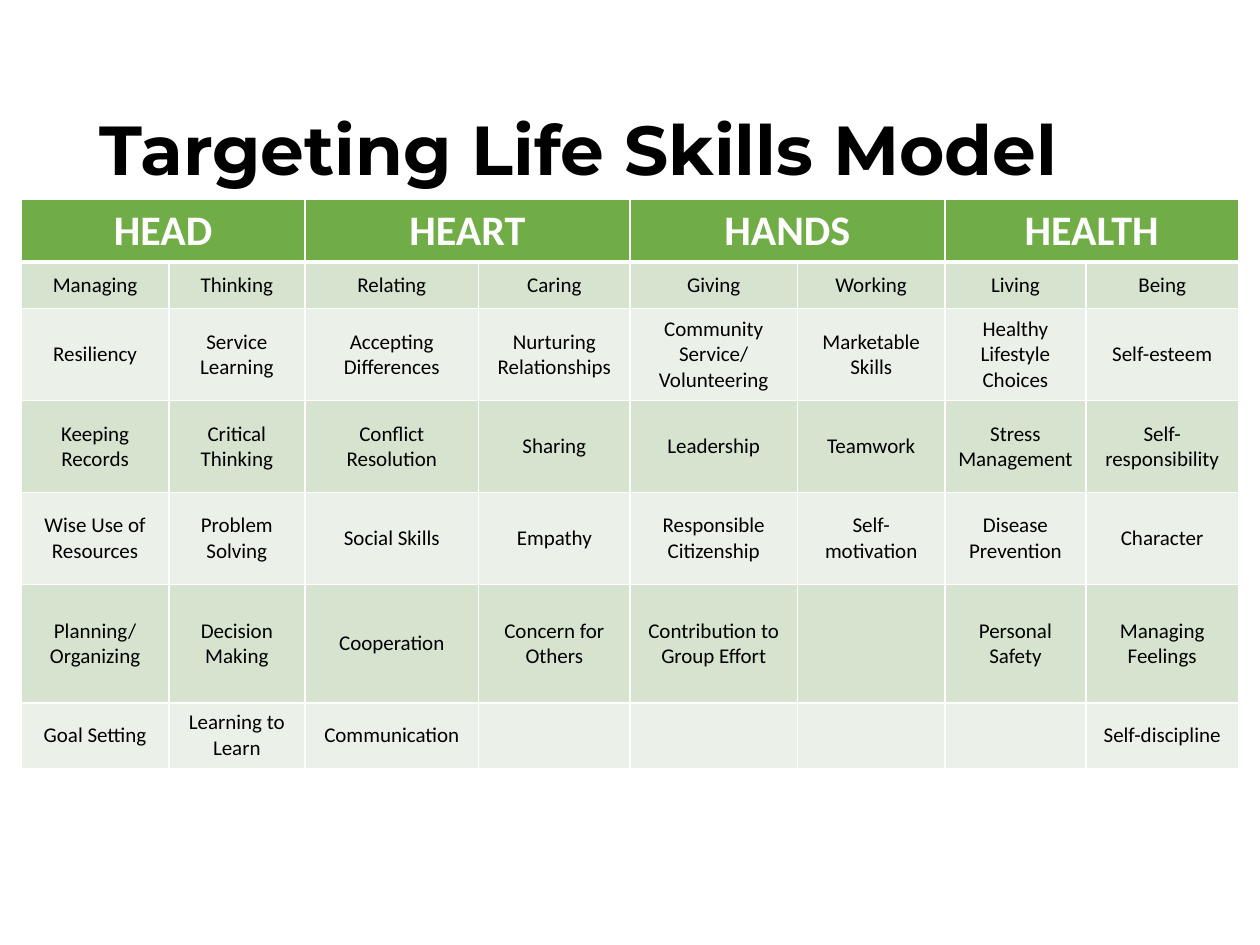
from dataclasses import dataclass

from lxml.etree import SubElement
from pptx import Presentation
from pptx.dml.color import RGBColor
from pptx.enum.text import MSO_ANCHOR, PP_ALIGN
from pptx.oxml.ns import qn
from pptx.util import Inches, Pt


@dataclass(frozen=True)
class Theme:
    """Colours, fonts and type sizes of the slide."""
    ink: str = "000000"
    white: str = "FFFFFF"
    green: str = "70AD47"
    bands: tuple = ("D5E3CF", "EBF1E9")
    title_font: str = "Montserrat"
    body_font: str = "Calibri"
    title_size: float = 39.6
    head_size: float = 24
    body_size: float = 12
    rule: float = 1
    head_rule: float = 3


THEME = Theme()
WIDTH, HEIGHT = Inches(10), Inches(7.5)
COLUMN_PERCENTS = (11.7, 10.8, 13.8, 12, 13.3, 11.7, 11.2, 12.1)
ROW_PERCENTS = (6.4, 4.93, 9.73, 9.73, 9.73, 12.53, 6.93)
HEADINGS = ("HEAD", "HEART", "HANDS", "HEALTH")
SKILLS = (
    ("Managing", "Thinking", "Relating", "Caring",
     "Giving", "Working", "Living", "Being"),
    ("Resiliency", "Service Learning", "Accepting Differences",
     "Nurturing Relationships", "Community Service/\nVolunteering",
     "Marketable Skills", "Healthy Lifestyle Choices", "Self-esteem"),
    ("Keeping Records", "Critical Thinking", "Conflict Resolution", "Sharing",
     "Leadership", "Teamwork", "Stress Management", "Self-responsibility"),
    ("Wise Use of Resources", "Problem Solving", "Social Skills", "Empathy",
     "Responsible Citizenship", "Self-motivation", "Disease Prevention",
     "Character"),
    ("Planning/\nOrganizing", "Decision Making", "Cooperation",
     "Concern for Others", "Contribution to Group Effort", "",
     "Personal Safety", "Managing Feelings"),
    ("Goal Setting", "Learning to Learn", "Communication",
     "", "", "", "", "Self-discipline"),
)


def across(percent):
    """Return a share of the slide's width."""
    return int(WIDTH * percent / 100)


def down(percent):
    """Return a share of the slide's height."""
    return int(HEIGHT * percent / 100)


def add_run(p, text, font, size, color, bold):
    """Add one styled run to a paragraph."""
    r = p.add_run()
    r.text = text
    r.font.name = font
    r.font.size = Pt(size)
    r.font.bold = bold
    r.font.color.rgb = RGBColor.from_string(color)


def add_title(s, text):
    """Add the slide title."""
    sp = s.shapes.add_textbox(across(6.9), down(11.33), across(91.5), down(9.73))
    tf = sp.text_frame
    tf.word_wrap = True
    tf.vertical_anchor = MSO_ANCHOR.MIDDLE
    p = tf.paragraphs[0]
    p.line_spacing = 0.9
    add_run(p, text, THEME.title_font, THEME.title_size, THEME.ink, True)


def set_borders(cell, top, bottom):
    """Draw white borders round a cell."""
    tc_pr = cell._tc.get_or_add_tcPr()
    widths = {"L": THEME.rule, "R": THEME.rule, "T": top, "B": bottom}
    for side, width in widths.items():
        ln = SubElement(tc_pr, qn(f"a:ln{side}"), w=str(Pt(width)))
        fill = SubElement(ln, qn("a:solidFill"))
        SubElement(fill, qn("a:srgbClr"), val=THEME.white)


def paint_cell(cell, row):
    """Give a cell the borders and fill of its row."""
    top = THEME.head_rule if row == 1 else THEME.rule
    bottom = THEME.head_rule if row == 0 else THEME.rule
    set_borders(cell, top, bottom)
    color = THEME.bands[(row - 1) % 2] if row else THEME.green
    cell.fill.solid()
    cell.fill.fore_color.rgb = RGBColor.from_string(color)


def write_cell(cell, text, size, color, bold, anchor):
    """Write centred text in a cell, one paragraph per line."""
    cell.vertical_anchor = anchor
    tf = cell.text_frame
    for i, line in enumerate(text.split("\n")):
        p = tf.add_paragraph() if i else tf.paragraphs[0]
        p.alignment = PP_ALIGN.CENTER
        add_run(p, line, THEME.body_font, size, color, bold)


def add_skills_table(s):
    """Add the table of skills under its four headings."""
    widths = [across(c) for c in COLUMN_PERCENTS]
    heights = [down(r) for r in ROW_PERCENTS]
    table = s.shapes.add_table(len(heights), len(widths), across(1.7), down(21.07),
                               sum(widths), sum(heights)).table
    for column, width in zip(table.columns, widths):
        column.width = width
    for i, (row, height) in enumerate(zip(table.rows, heights)):
        row.height = height
        for cell in row.cells:
            paint_cell(cell, i)
    for i, heading in enumerate(HEADINGS):
        cell = table.cell(0, 2 * i)
        cell.merge(table.cell(0, 2 * i + 1))
        write_cell(cell, heading, THEME.head_size, THEME.white, True, MSO_ANCHOR.TOP)
    for i, skills in enumerate(SKILLS, start=1):
        for j, skill in enumerate(skills):
            if skill:
                write_cell(table.cell(i, j), skill, THEME.body_size, THEME.ink,
                           False, MSO_ANCHOR.MIDDLE)


def main():
    """Build the slide and save it."""
    prs = Presentation()
    prs.slide_width, prs.slide_height = WIDTH, HEIGHT
    s = prs.slides.add_slide(prs.slide_layouts[6])
    add_title(s, "Targeting Life Skills Model")
    add_skills_table(s)
    prs.save("out.pptx")


if __name__ == "__main__":
    main()
